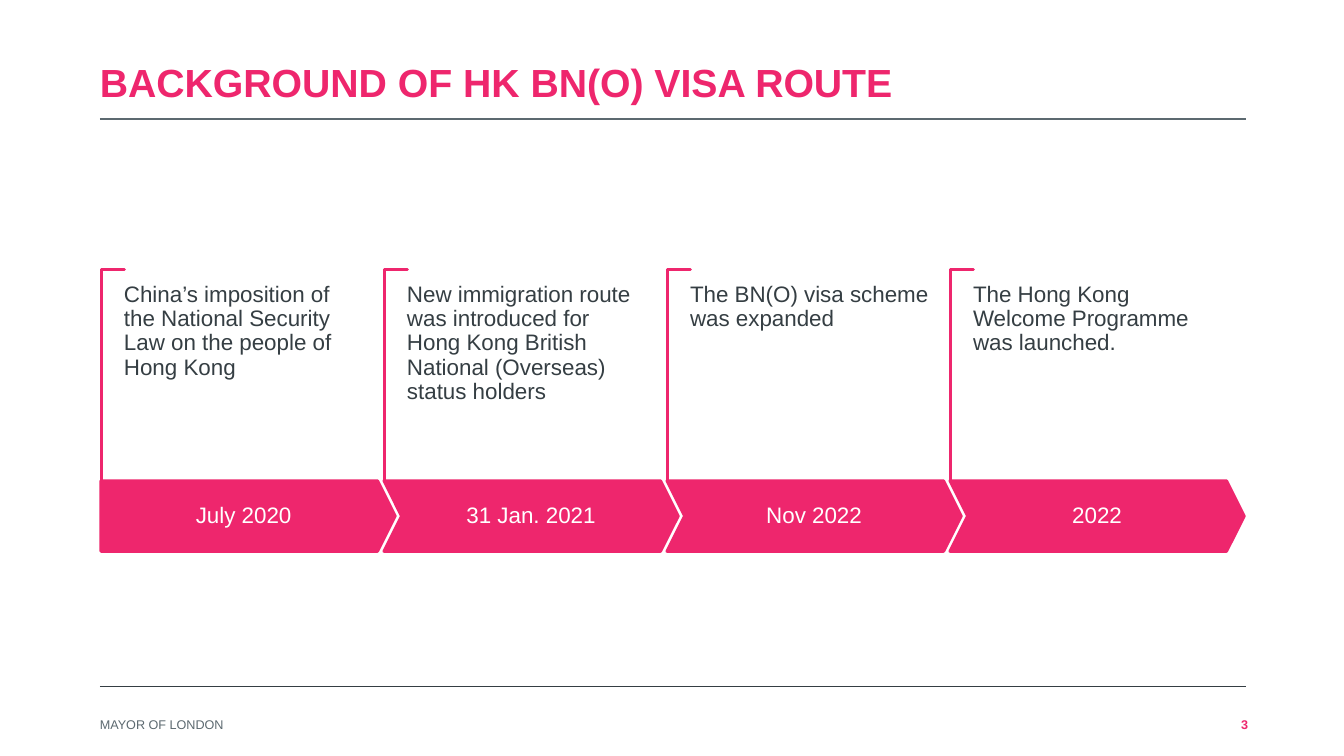
"""Build the visa route timeline slide."""
import dataclasses

import pptx
import pptx.dml.color
import pptx.enum.shapes
import pptx.enum.text
import pptx.oxml.ns
import pptx.util
from pptx.util import Inches

SHAPE = pptx.enum.shapes.MSO_SHAPE
ALIGN = pptx.enum.text.PP_ALIGN
ANCHOR = pptx.enum.text.MSO_ANCHOR


@dataclasses.dataclass(frozen=True)
class Theme:
    """Colours, typeface and type sizes of the slide."""
    pink: str = "EE266D"
    dark: str = "353E43"
    grey: str = "5C6970"
    white: str = "FFFFFF"
    font: str = "Arial"
    title: int = 28
    body: int = 16
    small: int = 9


THEME = Theme()
LEFT, RIGHT = 0.99, 12.36
PITCH = 2.807
MILESTONES = [
    ("July 2020", "China’s imposition of the National Security Law on the people of Hong Kong"),
    ("31 Jan. 2021", "New immigration route was introduced for Hong Kong British National (Overseas) status holders"),
    ("Nov 2022", "The BN(O) visa scheme was expanded"),
    ("2022", "The Hong Kong Welcome Programme was launched."),
]


def rgb(value):
    """Turn a hex string into a colour."""
    return pptx.dml.color.RGBColor.from_string(value)


def set_text(sp, text, size, color, bold=False, align=ALIGN.LEFT,
             anchor=ANCHOR.MIDDLE, insets=(0, 0, 0, 0), spacing=0.9):
    """Fill a shape with one formatted paragraph."""
    tf = sp.text_frame
    tf.word_wrap = True
    tf.auto_size = pptx.enum.text.MSO_AUTO_SIZE.NONE
    tf.vertical_anchor = anchor
    tf.margin_left, tf.margin_top, tf.margin_right, tf.margin_bottom = map(Inches, insets)
    p = tf.paragraphs[0]
    p.text = text
    p.alignment = align
    p.line_spacing = spacing
    p.font.name = THEME.font
    p.font.size = pptx.util.Pt(size)
    p.font.bold = bold
    p.font.color.rgb = rgb(color)


def add_title(s, text):
    """Place and format the title placeholder."""
    sp = s.shapes.title
    sp.left, sp.top, sp.width, sp.height = map(Inches, (LEFT, 0.55, RIGHT - LEFT, 0.59))
    set_text(sp, text, THEME.title, THEME.pink, bold=True, insets=(0, 0.05, 0.1, 0.05))


def add_text(s, box, text, size, color, **options):
    """Add a text box."""
    sp = s.shapes.add_textbox(*map(Inches, box))
    set_text(sp, text, size, color, **options)


def add_rule(s, y, color):
    """Add a horizontal line across the content width."""
    line = s.shapes.add_connector(pptx.enum.shapes.MSO_CONNECTOR.STRAIGHT,
                                  Inches(LEFT), Inches(y), Inches(RIGHT), Inches(y))
    line.line.color.rgb = rgb(color)
    line.line.width = pptx.util.Pt(1)
    props = line._element.spPr
    props.append(props.makeelement(pptx.oxml.ns.qn("a:effectLst"), {}))


def add_shape(s, kind, box, fill, adjustments):
    """Add a filled preset shape with a pink outline."""
    sp = s.shapes.add_shape(kind, *map(Inches, box))
    sp.shadow.inherit = False
    sp.fill.solid()
    sp.fill.fore_color.rgb = rgb(fill)
    sp.line.color.rgb = rgb(THEME.pink)
    sp.line.width = pptx.util.Pt(2)
    for i, value in enumerate(adjustments):
        sp.adjustments[i] = value
    return sp


def add_milestone(s, index, date, text):
    """Add one timeline step: bracket, dated arrow and description."""
    x = 1 + index * PITCH
    bracket = add_shape(s, SHAPE.CORNER, (x - 0.93, 3.61, 2.1, 0.23), THEME.white, (0.01, 0.01))
    bracket.rotation = 90
    kind = SHAPE.CHEVRON if index else SHAPE.PENTAGON
    arrow = add_shape(s, kind, (x, 4.77, 2.92, 0.7), THEME.pink, (0.25,))
    set_text(arrow, date, THEME.body, THEME.white, align=ALIGN.CENTER)
    add_text(s, (x + 0.23, 2.81, 2.37, 1.41), text, THEME.body, THEME.dark, anchor=ANCHOR.TOP)


def main():
    """Build and save the slide."""
    prs = pptx.Presentation()
    prs.slide_width, prs.slide_height = Inches(13.33), Inches(7.5)
    s = prs.slides.add_slide(prs.slide_layouts[5])
    add_title(s, "BACKGROUND OF HK BN(O) VISA ROUTE")
    add_rule(s, 1.18, THEME.grey)
    add_rule(s, 6.81, THEME.dark)
    for index, (date, text) in enumerate(MILESTONES):
        add_milestone(s, index, date, text)
    add_text(s, (LEFT, 7.07, 5.11, 0.24), "MAYOR OF LONDON", THEME.small, THEME.grey, spacing=1.0)
    add_text(s, (7.27, 7.07, 5.11, 0.24), "3", THEME.small, THEME.pink,
             bold=True, align=ALIGN.RIGHT, spacing=1.0)
    prs.save("out.pptx")


if __name__ == "__main__":
    main()
